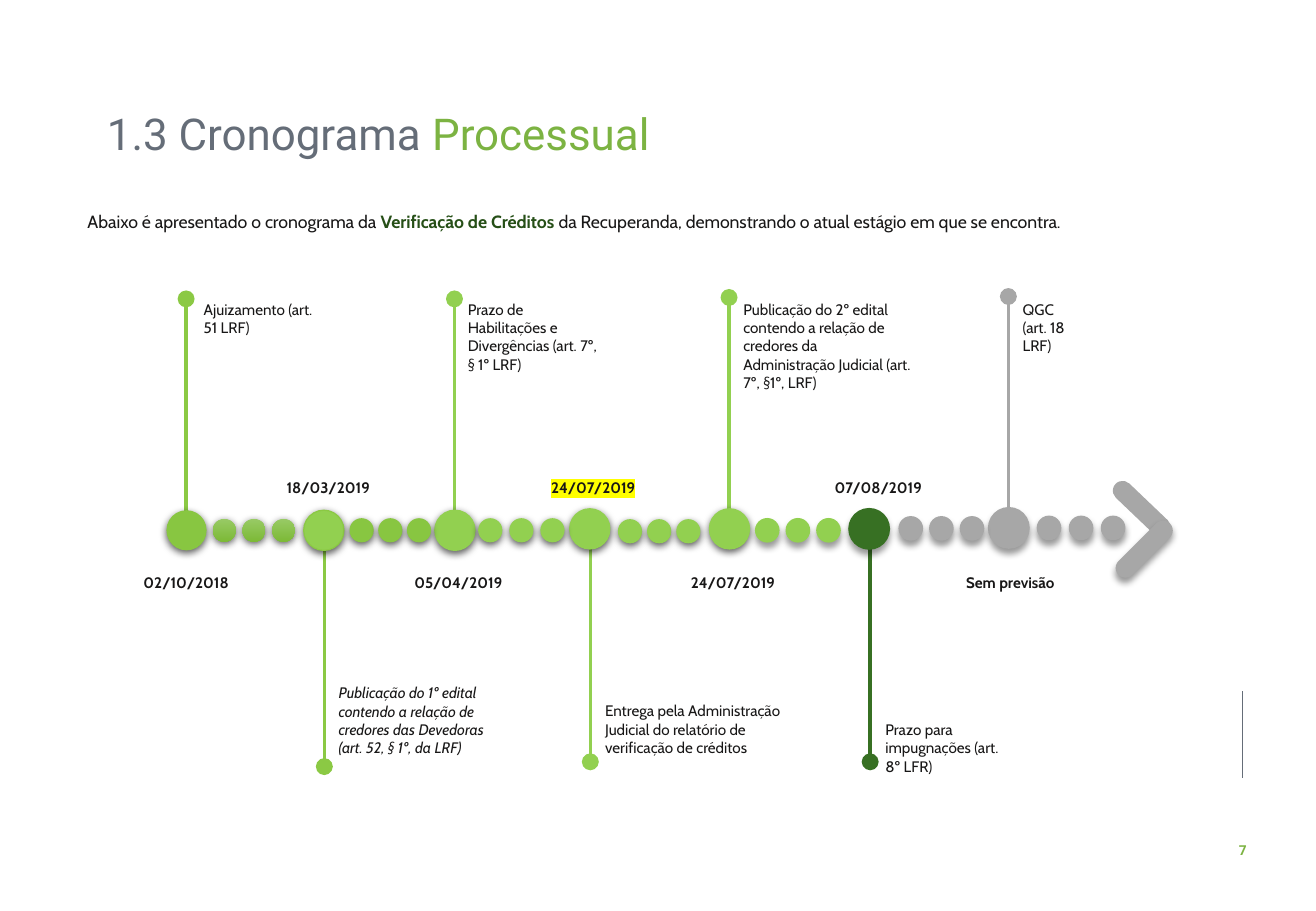
from lxml.etree import SubElement as Sub
from pptx import Presentation
from pptx.dml.color import RGBColor as RGB
from pptx.enum.shapes import MSO_CONNECTOR as Conn, MSO_SHAPE as Shape
from pptx.enum.text import MSO_ANCHOR as Anchor, PP_ALIGN as Align
from pptx.oxml.ns import qn
from pptx.util import Cm, Pt

INK = RGB(0x18, 0x17, 0x17)
SLATE = RGB(0x65, 0x6D, 0x78)
BRAND = RGB(0x7C, 0xB3, 0x42)
DEEP = RGB(0x26, 0x4F, 0x17)
LEAF = RGB(0x88, 0xC6, 0x41)
STEM = RGB(0x8B, 0xC9, 0x44)
LIME = RGB(0x92, 0xD0, 0x50)
PINE = RGB(0x37, 0x70, 0x23)
GREY = RGB(0xA7, 0xA7, 0xA7)
PALE = RGB(0x98, 0xCA, 0x65)
MOSS = RGB(0x7C, 0xB9, 0x36)

TIGHT = {"alpha": 63, "blur": 4.5, "dist": 1.5}
SOFT = {"alpha": 40, "blur": 4, "dist": 3}
NOTE = {"size": Pt(9), "name": "Cabin"}
DATE = {**NOTE, "bold": True}
INTRO = {"size": Pt(10.5), "name": "Cabin"}
HEAD = {"size": Pt(26), "name": "Roboto"}
PAGE = {"size": Pt(8.1), "name": "Roboto", "bold": True}
BIG, SMALL = 0.84, 0.48
UP, DOWN = 9.88, 11.86


class Deck:
    def __init__(self, wide, high):
        self.prs = Presentation()
        self.prs.slide_width, self.prs.slide_height = Cm(wide), Cm(high)
        self.slide = self.prs.slides.add_slide(self.prs.slide_layouts[5])
        self.shapes = self.slide.shapes

    def run(self, para, text, look, color=INK):
        run = para.add_run()
        run.text = text
        run.font.color.rgb = color
        for key, value in look.items():
            setattr(run.font, key, value)
        return run

    def title(self, parts, x, y, w, h):
        box = self.shapes.title
        box.left, box.top, box.width, box.height = map(Cm, (x, y, w, h))
        box.text_frame.vertical_anchor = Anchor.MIDDLE
        para = box.text_frame.paragraphs[0]
        para.alignment, para.line_spacing, para.space_before = Align.LEFT, 0.9, Pt(0)
        for text, color in parts:
            self.run(para, text, HEAD, color)

    def text(self, lines, x, y, w, h, look, color=INK, align=Align.LEFT, wrap=True):
        frame = self.shapes.add_textbox(*map(Cm, (x, y, w, h))).text_frame
        frame.word_wrap = wrap
        for i, line in enumerate(lines):
            para = frame.add_paragraph() if i else frame.paragraphs[0]
            para.alignment = align
            self.run(para, line, look, color)
        return frame.paragraphs[0]

    def mark(self, para, color):
        fill = para.runs[0].font._element.find(qn("a:solidFill"))
        glow = Sub(fill.getparent(), qn("a:highlight"))
        Sub(glow, qn("a:srgbClr"), val=str(color))
        fill.addnext(glow)

    def line(self, x, top, end, color, width, dot=True):
        line = self.shapes.add_connector(Conn.STRAIGHT, Cm(x), Cm(top), Cm(x), Cm(end))
        line.line.color.rgb, line.line.width = color, Pt(width)
        if dot:
            Sub(line.line._get_or_add_ln(), qn("a:headEnd"), type="oval", w="lg", len="lg")
        Sub(line._element.spPr, qn("a:effectLst"))

    def shade(self, shape, alpha, blur, dist):
        spot = Sub(shape._element.spPr.find(qn("a:effectLst")), qn("a:outerShdw"),
                   blurRad=str(Pt(blur)), dist=str(Pt(dist)), dir="5400000",
                   algn="ctr", rotWithShape="0")
        tint = Sub(spot, qn("a:srgbClr"), val="000000")
        Sub(tint, qn("a:alpha"), val=str(alpha * 1000))

    def form(self, kind, x, y, w, h, color, cast=None, edge=None):
        shape = self.shapes.add_shape(kind, *map(Cm, (x, y, w, h)))
        shape.shadow.inherit = False
        shape.fill.solid()
        shape.fill.fore_color.rgb = color
        if edge:
            shape.line.color.rgb, shape.line.width = edge, Pt(0.75 if cast is TIGHT else 1)
        else:
            shape.line.fill.background()
        if cast:
            self.shade(shape, **cast)
        return shape

    def ball(self, x, y, size, color, cast, edge=None):
        return self.form(Shape.OVAL, x - size / 2, y - size / 2, size, size, color, cast, edge)

    def blend(self, shape, first, last):
        shape.fill.gradient()
        shape.fill.gradient_angle = 270
        for stop, color in zip(shape.fill.gradient_stops, (first, last)):
            stop.color.rgb = color


def main():
    deck = Deck(27.51, 19.05)
    deck.title([("1.3 Cronograma ", SLATE), ("Processual", BRAND)], 1.98, 2.18, 20.78, 1.35)
    intro = deck.text(["Abaixo é apresentado o cronograma da "], 0.79, 4.22, 25.83, 0.76,
                      INTRO, align=Align.JUSTIFY)
    intro.line_spacing = 1.14
    intro._p.get_or_add_pPr().set("indent", str(Cm(0.79)))
    deck.run(intro, "Verificação de Créditos ", {**INTRO, "bold": True}, DEEP)
    deck.run(intro, "da Recuperanda, demonstrando o atual estágio em que se encontra.", INTRO)

    stems = [(3.89, 6.25, STEM), (6.78, 16.03, STEM), (9.5, 6.25, LIME), (12.34, 15.93, LIME),
             (15.24, 6.22, LIME), (18.19, 15.93, PINE), (21.08, 6.2, GREY)]
    for x, top, color in stems:
        deck.line(x, top, 11.06, color, 2)

    balls = [(3.9, 11.09, LEAF, TIGHT, None), (6.77, 11.09, LIME, TIGHT, STEM),
             (9.51, 11.09, LIME, TIGHT, LIME), (12.33, 11.06, LIME, TIGHT, LIME),
             (15.25, 11.06, LIME, TIGHT, LIME), (18.17, 11.06, PINE, SOFT, PINE),
             (21.09, 11.04, GREY, SOFT, GREY)]
    for x, y, color, cast, edge in balls:
        deck.ball(x, y, BIG, color, cast, edge)

    beads = [(4.69, 0.62, 11.09, None, TIGHT), (7.56, 0.6, 11.09, LEAF, TIGHT),
             (10.25, 0.65, 11.09, LIME, TIGHT), (13.17, 0.61, 11.11, LIME, TIGHT),
             (16.04, 0.64, 11.09, LIME, SOFT), (19.04, 0.64, 11.05, GREY, SOFT),
             (21.93, 0.67, 11.04, GREY, SOFT)]
    for x, step, y, color, cast in beads:
        for i in range(3):
            bead = deck.ball(x + i * step, y, SMALL, color or STEM, cast, color)
            if not color:
                deck.blend(bead, PALE, MOSS)

    for x, y, turn, cast in [(23.11, 10.44, 43.7, None), (23.16, 11.28, 315, SOFT)]:
        bar = deck.form(Shape.ROUNDED_RECTANGLE, x, y, 1.52, 0.41, GREY, cast)
        bar.adjustments[0], bar.rotation = 0.5, turn

    dates = [("02/10/2018", 3.89, DOWN, 4.47), ("18/03/2019", 6.86, UP, 2.79),
             ("05/04/2019", 9.58, DOWN, 2.79), ("24/07/2019", 12.4, UP, 2.79),
             ("24/07/2019", 15.32, DOWN, 2.79), ("07/08/2019", 18.36, UP, 2.79),
             ("Sem previsão", 21.12, DOWN, 2.82)]
    paras = [deck.text([day], x - w / 2, y, w, 0.64, DATE, align=Align.CENTER)
             for day, x, y, w in dates]
    deck.mark(paras[3], RGB(0xFF, 0xFF, 0x00))

    notes = [
        (["Ajuizamento (art. 51 LRF)"], 4.01, 6.15, 2.84, 1.02),
        (["Publicação do 1º edital contendo a relação de credores das Devedoras "
          "(art. 52, § 1º, da LRF)"], 6.83, 14.17, 3.63, 1.8),
        (["Prazo de Habilitações e Divergências (art. 7º, § 1º LRF)"], 9.53, 6.15, 3.3, 1.42),
        (["Entrega pela Administração Judicial do relatório de verificação de créditos"],
         12.4, 14.55, 4.52, 1.42),
        (["Publicação do 2º edital contendo a relação de credores da "
          "Administração Judicial (art. 7º, §1º, LRF)"], 15.29, 6.15, 3.99, 1.8),
        (["Prazo para impugnações (art. 8º LFR)"], 18.26, 14.94, 3.15, 1.42),
        (["QGC", "(art. 18 LRF)"], 21.13, 6.15, 2.03, 1.02)]
    for i, (lines, x, y, w, h) in enumerate(notes):
        deck.text(lines, x, y, w, h, {**NOTE, "italic": i == 1})

    deck.line(25.98, 14.45, 16.26, SLATE, 0.5, dot=False)
    deck.text(["7"], 25.55, 17.48, 0.86, 0.61, PAGE, BRAND, Align.CENTER, wrap=False)
    deck.prs.save("out.pptx")


if __name__ == "__main__":
    main()
